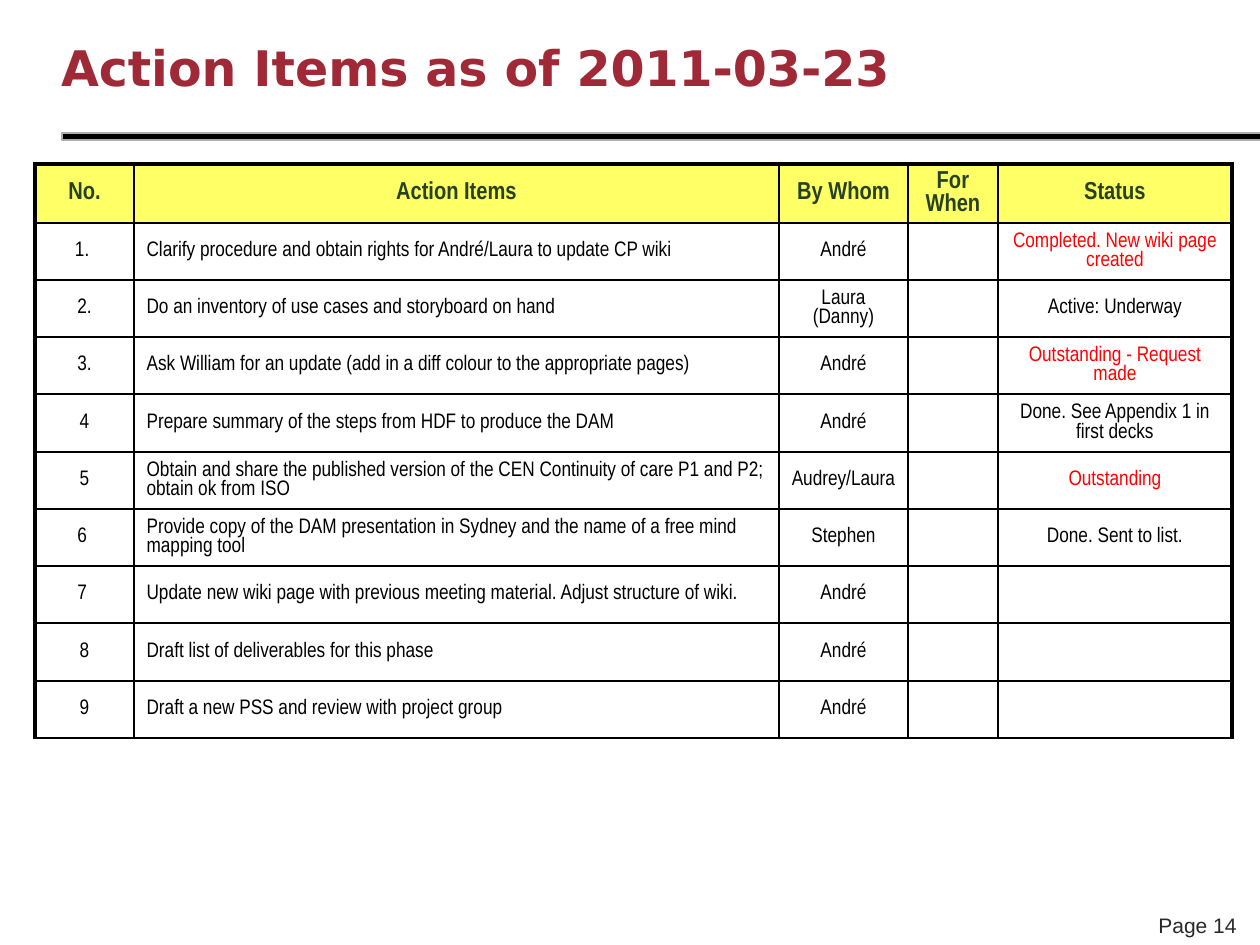
from lxml import etree
from pptx import Presentation
from pptx.dml.color import RGBColor
from pptx.enum.shapes import MSO_SHAPE
from pptx.enum.text import MSO_ANCHOR, MSO_AUTO_SIZE, PP_ALIGN
from pptx.oxml.ns import qn
from pptx.util import Pt

PX = 914400 / 126  # EMU in one px
SLIDE_WIDTH, SLIDE_HEIGHT = 1260, 945

BLACK = RGBColor(0x00, 0x00, 0x00)
RED = RGBColor(0xFF, 0x00, 0x00)
CRIMSON = RGBColor(0x9F, 0x29, 0x36)
GREEN = RGBColor(0x27, 0x42, 0x21)
YELLOW = RGBColor(0xFF, 0xFF, 0x66)
GRAY = RGBColor(0xAD, 0xAD, 0xAD)
CHARCOAL = RGBColor(0x29, 0x29, 0x29)

LEFT, CENTER, RIGHT = PP_ALIGN.LEFT, PP_ALIGN.CENTER, PP_ALIGN.RIGHT
MIDDLE, BOTTOM = MSO_ANCHOR.MIDDLE, MSO_ANCHOR.BOTTOM
RECTANGLE = MSO_SHAPE.RECTANGLE
NO_AUTOFIT = MSO_AUTO_SIZE.NONE

TITLE_ONLY_LAYOUT = 5
THIN, THICK = Pt(1), Pt(2.25)

COLUMN_WIDTHS = [99, 645, 129, 90, 234]
HEADER_HEIGHT = 59
HEADERS = ["No.", "Action Items", "By Whom", "For When", "Status"]
ACTION_COLUMN, STATUS_COLUMN = 1, 4

# Number, action, person, date, status
ACTIONS = [
    ("1. ", "Clarify procedure and obtain rights for André/Laura to update CP wiki",
     "André", "", "Completed. New wiki page created"),
    ("2.", "Do an inventory of use cases and storyboard on hand",
     "Laura (Danny)", "", "Active: Underway"),
    ("3.", "Ask William for an update (add in a diff colour to the appropriate pages)",
     "André", "", "Outstanding - Request made"),
    ("4", "Prepare summary of the steps from HDF to produce the DAM",
     "André", "", "Done. See Appendix 1 in first decks"),
    ("5", "Obtain and share the published version of the CEN Continuity of care "
     "P1 and P2; obtain ok from ISO",
     "Audrey/Laura", "", "Outstanding"),
    ("6 ", "Provide copy of the DAM presentation in Sydney and the name of a free "
     "mind mapping tool",
     "Stephen", "", "Done. Sent to list."),
    ("7 ", "Update new wiki page with previous meeting material. "
     "Adjust structure of wiki.",
     "André", "", ""),
    ("8", "Draft list of deliverables for this phase", "André", "", ""),
    ("9", "Draft a new PSS and review with project group", "André", "", ""),
]
RED_STATUSES = ("Completed", "Outstanding")


def px(*lengths):
    return [round(length * PX) for length in lengths]


def write(text_frame, text, font_name, size, color, bold=False, align=LEFT):
    text_frame.text = text
    paragraph = text_frame.paragraphs[0]
    paragraph.alignment = align
    for run in paragraph.runs:
        run.font.name = font_name
        run.font.size = Pt(size)
        run.font.bold = bold
        run.font.color.rgb = color


def add_title(slide, text):
    title = slide.shapes.title
    title.left, title.top, title.width, title.height = px(61, 15, 1071, 103)
    text_frame = title.text_frame
    write(text_frame, text, "DejaVu Sans", 28, CRIMSON, bold=True)
    text_frame.auto_size = NO_AUTOFIT
    text_frame.vertical_anchor = MIDDLE
    text_frame.margin_left = text_frame.margin_right = 0
    text_frame.margin_top = text_frame.margin_bottom = 0


def add_rule(slide):
    rule = slide.shapes.add_shape(RECTANGLE, *px(62, 133, SLIDE_WIDTH - 61, 7))
    rule.shadow.inherit = False
    rule.fill.solid()
    rule.fill.fore_color.rgb = BLACK
    rule.line.color.rgb = GRAY
    rule.line.width = Pt(0.75)


def add_page_number(slide, text):
    box = slide.shapes.add_textbox(*px(1112, 906, 137, 38))
    box.text_frame.word_wrap = True
    box.text_frame.vertical_anchor = BOTTOM
    write(box.text_frame, text, "Arial", 12, CHARCOAL, align=RIGHT)


def set_borders(cell, widths):
    """Draw black borders, given as widths by side; they precede the fill."""
    properties = cell._tc.get_or_add_tcPr()
    for position, (side, width) in enumerate(widths.items()):
        line = etree.Element(qn(f"a:ln{side}"), w=str(width))
        fill = etree.SubElement(line, qn("a:solidFill"))
        etree.SubElement(fill, qn("a:srgbClr"), val=str(BLACK))
        properties.insert(position, line)


def format_cell(cell, text, row, column):
    cell.vertical_anchor = MIDDLE
    # Two lines must fit without stretching the row
    cell.margin_top = cell.margin_bottom = 0
    if row == 0:
        cell.fill.solid()
        cell.fill.fore_color.rgb = YELLOW
        write(cell.text_frame, text, "Arial Narrow", 14, GREEN, True, CENTER)
    else:
        cell.fill.background()
        is_red = column == STATUS_COLUMN and text.startswith(RED_STATUSES)
        write(cell.text_frame, text, "Arial Narrow", 12, RED if is_red else BLACK,
              align=LEFT if column == ACTION_COLUMN else CENTER)
    set_borders(cell, {
        "L": THICK if column == 0 else THIN,
        "R": THICK if column == STATUS_COLUMN else THIN,
        "T": THICK if row == 0 else THIN,
        "B": THIN,
    })


def add_action_table(slide):
    rows = [HEADERS, *ACTIONS]
    # Body rows average 57.25 px, so every fourth is one px taller
    heights = [HEADER_HEIGHT] + [58 if number % 4 == 0 else 57
                                 for number in range(1, len(rows))]
    frame = slide.shapes.add_table(
        len(rows), len(HEADERS),
        *px(35, 164, sum(COLUMN_WIDTHS), sum(heights)))
    table = frame.table
    table.first_row = table.horz_banding = False
    for column, width in zip(table.columns, px(*COLUMN_WIDTHS)):
        column.width = width
    for table_row, height in zip(table.rows, px(*heights)):
        table_row.height = height
    for row, texts in enumerate(rows):
        for column, text in enumerate(texts):
            format_cell(table.cell(row, column), text, row, column)


def main():
    presentation = Presentation()
    presentation.slide_width, presentation.slide_height = px(SLIDE_WIDTH, SLIDE_HEIGHT)
    slide = presentation.slides.add_slide(presentation.slide_layouts[TITLE_ONLY_LAYOUT])

    # Page frame
    add_page_number(slide, "Page 14")
    add_rule(slide)

    # Content
    add_title(slide, "Action Items as of 2011-03-23")
    add_action_table(slide)

    presentation.save("out.pptx")


if __name__ == "__main__":
    main()
